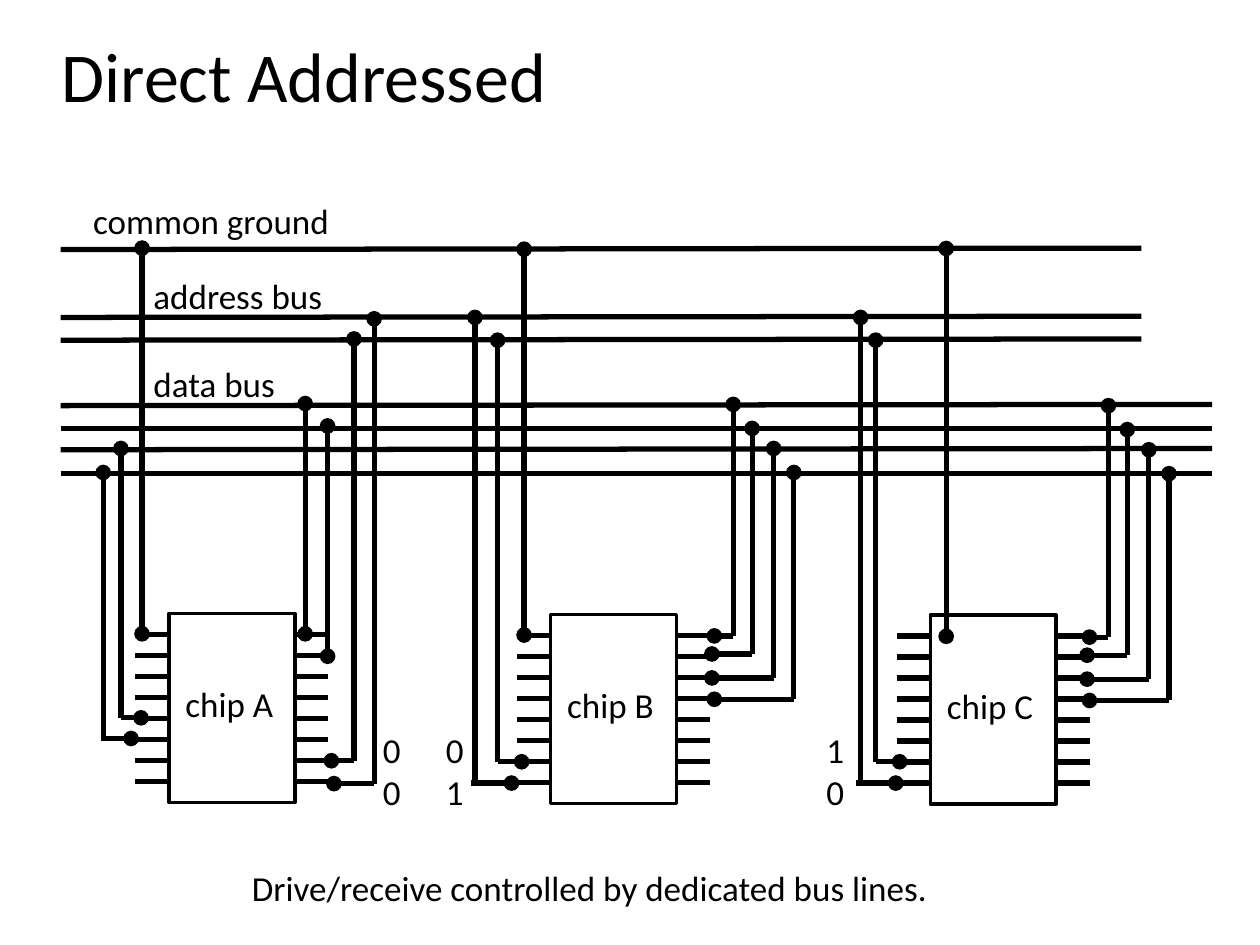
"""Build a slide of three chips with direct addressing over shared buses."""
from dataclasses import dataclass

from lxml.etree import SubElement
from pptx import Presentation
from pptx.dml.color import RGBColor
from pptx.enum.shapes import MSO_CONNECTOR as Connector, MSO_SHAPE as Shape
from pptx.enum.text import MSO_AUTO_SIZE as AutoSize
from pptx.oxml.ns import qn
from pptx.util import Pt


@dataclass(frozen=True)
class Theme:
    ink: RGBColor = RGBColor(0, 0, 0)
    font: str = "Calibri"
    title: int = 40
    body: int = 20
    wire: int = 3
    outline: int = 2


THEME = Theme()
CHIP_WIDTH, CHIP_HEIGHT = 72, 108
PIN_COUNT, PIN_PITCH, PIN_LENGTH = 8, 12, 19.2
BUS_LEFT = 34.6


def add_text(slide, text, left, top, width, height=31.5, size=THEME.body, wrap=True):
    label = slide.shapes.add_textbox(Pt(left), Pt(top), Pt(width), Pt(height))
    frame = label.text_frame
    frame.word_wrap = wrap
    frame.auto_size = AutoSize.SHAPE_TO_FIT_TEXT
    frame.text = text
    for paragraph in frame.paragraphs:
        font = paragraph.font
        for run in paragraph.runs:
            font = run.font
            font.name, font.size = THEME.font, Pt(size)
            font.color.rgb = THEME.ink


def add_wire(parent, start, end, dots=()):
    wire = parent.shapes.add_connector(
        Connector.STRAIGHT, *(Pt(length) for length in (*start, *end)))
    wire.line.width = Pt(THEME.wire)
    wire.line.color.rgb = THEME.ink
    properties = wire._element.spPr
    outline = properties.find(qn("a:ln"))
    for dot in dots:
        SubElement(outline, qn(f"a:{dot}End"), type="oval")
    SubElement(properties, qn("a:effectLst"))


def add_chip(slide, name, left, top):
    chip = slide.shapes.add_shape(
        Shape.RECTANGLE, Pt(left), Pt(top), Pt(CHIP_WIDTH), Pt(CHIP_HEIGHT))
    chip.shadow.inherit = False
    chip.fill.background()
    chip.line.color.rgb = THEME.ink
    chip.line.width = Pt(THEME.outline)
    for pin_left in (left + CHIP_WIDTH, left - PIN_LENGTH):
        for pin in range(1, PIN_COUNT + 1):
            y = top + pin * PIN_PITCH
            add_wire(slide, (pin_left, y), (pin_left + PIN_LENGTH, y))
    add_text(slide, name, left + 2.4, top + 36, 69.5, wrap=False)


def add_link(slide, x, bottom, top):
    add_wire(slide, (x, bottom), (x, top), dots=("head", "tail"))


def add_tap(slide, x, bus_y, pin_x, pin_y, overshoot=0):
    tap = slide.shapes.add_group_shape()
    add_wire(tap, (x, bus_y), (x, pin_y), dots=("head",))
    add_wire(tap, (pin_x, pin_y), (x - overshoot, pin_y), dots=("head",))


def add_buses(slide):
    ground_and_address = [(142.6, 141.8), (181.4, 180.7), (194.4, 193.7)]
    data = [(231.8, 231.1), (244.8, 244.8), (257, 256.3), (270.7, 270.7)]
    for right, bus in ((652.3, ground_and_address), (692.6, data)):
        for left_y, right_y in bus:
            add_wire(slide, (BUS_LEFT, left_y), (right, right_y))
    for name, left, top in (("common ground", 46.1, 110.2),
                            ("address bus", 80.6, 153.4),
                            ("data bus", 80.6, 203.8)):
        add_text(slide, name, left, top, 162)


def add_links(slide):
    for x, bottom, top in ((81.2, 362.2, 141.8), (299.5, 362.9, 142.4),
                           (540.7, 363.6, 142), (174.4, 362.2, 230.6),
                           (187.2, 375, 243.4)):
        add_link(slide, x, bottom, top)


def add_taps(slide):
    address_taps = [
        (213.8, 182.2, 190.8, 447.8), (202.3, 193.7, 189.4, 434.7),
        (271.4, 181.4, 292.3, 447.5, 2.2), (284.4, 194.4, 298.1, 435.3),
        (491.8, 181.4, 511.9, 447.5, 2.9), (500.4, 194.4, 514.1, 435.3)]
    chip_a_data_taps = [(59, 270, 74.9, 422, 1.4), (69.1, 256.3, 80.6, 410.2)]
    chip_b_data_taps = [
        (419, 231.1, 408.2, 363.4), (429.8, 244.8, 406.8, 373.7),
        (442.1, 256.3, 406.8, 387.4), (453.6, 270, 408.2, 399.6)]
    to_chip_c, drop = 214.4, 0.7
    chip_c_data_taps = [
        (x + to_chip_c, bus_y + drop, pin_x + to_chip_c, pin_y + drop)
        for x, bus_y, pin_x, pin_y in chip_b_data_taps]
    for tap in address_taps + chip_a_data_taps + chip_b_data_taps + chip_c_data_taps:
        add_tap(slide, *tap)


def main():
    deck = Presentation()
    deck.slide_width, deck.slide_height = Pt(720), Pt(540)
    slide = deck.slides.add_slide(deck.slide_layouts[6])
    add_text(slide, "Direct Addressed", 28.1, 15.1, 294.5, 55.7,
             size=THEME.title, wrap=False)
    add_buses(slide)
    for name, left, top in (("chip A", 96.5, 350.6), ("chip B", 314.6, 351.2),
                            ("chip C", 531.6, 351.5)):
        add_chip(slide, name, left, top)
    add_links(slide)
    add_taps(slide)
    for address, left in (("0\n0", 211.7), ("0\n1", 247.7), ("1\n0", 465.1)):
        add_text(slide, address, left, 412.6, 31, 55.7)
    add_text(slide, "Drive/receive controlled by dedicated bus lines.",
             136.8, 491.8, 459.4)
    deck.save("out.pptx")


if __name__ == "__main__":
    main()
